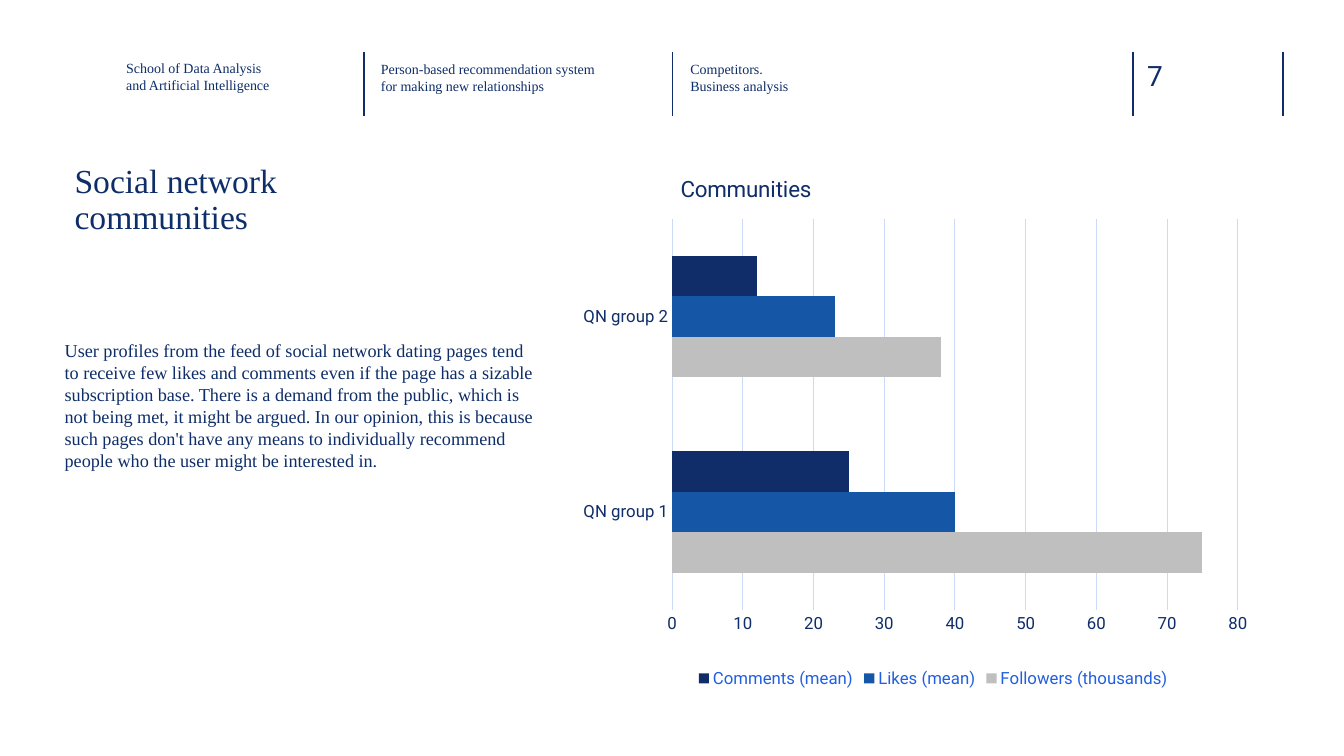
from lxml import etree
from pptx import Presentation
from pptx.chart.data import CategoryChartData
from pptx.dml.color import RGBColor
from pptx.enum.chart import XL_CHART_TYPE, XL_LEGEND_POSITION, XL_TICK_MARK
from pptx.enum.shapes import MSO_CONNECTOR
from pptx.oxml import parse_xml
from pptx.oxml.ns import nsdecls, qn
from pptx.util import Cm, Pt

NAVY, INK, GRID = "102D69", "0E2D69", "CCDAF8"
SERIF, SANS = "Times New Roman", "Roboto"


def style(font, size, color, face=SANS):
    font.size = Pt(size)
    font.name = face
    font.bold = False
    font.color.rgb = RGBColor.from_string(color)


def add_text(left, top, width, height, lines, size, color=INK, face=SERIF,
             insets=(0, 0), spacing=None):
    """Add a wrapping text box; insets are (horizontal, vertical) in cm."""
    frame = slide.shapes.add_textbox(Cm(left), Cm(top), Cm(width), Cm(height)).text_frame
    frame.word_wrap = True
    frame.margin_left = frame.margin_right = Cm(insets[0])
    frame.margin_top = frame.margin_bottom = Cm(insets[1])
    for index, line in enumerate(lines):
        paragraph = frame.paragraphs[0] if index == 0 else frame.add_paragraph()
        paragraph.line_spacing = spacing
        run = paragraph.add_run()
        run.text = line
        style(run.font, size, color, face)


presentation = Presentation()
presentation.slide_width, presentation.slide_height = Cm(33.87), Cm(19.05)
slide = presentation.slides.add_slide(presentation.slide_layouts[6])

# Header
for x in (9.17, 16.94, 28.55, 32.33):
    divider = slide.shapes.add_connector(MSO_CONNECTOR.STRAIGHT, Cm(x), Cm(1.3), Cm(x), Cm(2.92))
    divider.line.color.rgb = RGBColor.from_string(NAVY)
    divider.line.width = Pt(1)
    etree.SubElement(divider._element.spPr, qn("a:effectLst"))

add_text(28.91, 1.47, 1.85, 0.86, ["7"], 20, NAVY, SANS)
for left, top, width, lines in (
    (3.18, 1.5, 5.28, ["School of Data Analysis", "and Artificial Intelligence"]),
    (9.6, 1.52, 5.74, ["Person-based recommendation system for making new relationships"]),
    (17.4, 1.52, 5.74, ["Competitors.", "Business analysis"]),
):
    add_text(left, top, width, 1.14, lines, 10)

# Heading and argument
add_text(1.63, 4.01, 29.77, 2.16, ["Social network", "communities"], 24,
         insets=(0.25, 0.13), spacing=0.9)
add_text(1.63, 8.56, 12.01, 6.48, [
    "User profiles from the feed of social network dating pages tend to receive few likes "
    "and comments even if the page has a sizable subscription base. There is a demand from "
    "the public, which is not being met, it might be argued. In our opinion, this is because "
    "such pages don't have any means to individually recommend people who the user might be "
    "interested in."], 13)

# Community activity chart
activity = (
    ("Followers (thousands)", (75, 38), "BFBFBF"),
    ("Likes (mean)", (40, 23), "1656A6"),
    ("Comments (mean)", (25, 12), NAVY),
)
chart_data = CategoryChartData()
chart_data.categories = ["QN group 1", "QN group 2"]
for name, values, _ in activity:
    chart_data.add_series(name, values)
chart = slide.shapes.add_chart(XL_CHART_TYPE.BAR_CLUSTERED, Cm(14.53), Cm(4.04),
                               Cm(17.98), Cm(13.41), chart_data).chart
style(chart.font, 10, NAVY, "Arial")

bars = chart.plots[0]
bars.gap_width = 182
bars.overlap = 0
bars.vary_by_categories = False
for series, (_, _, color) in zip(bars.series, activity):
    series.format.fill.solid()
    series.format.fill.fore_color.rgb = RGBColor.from_string(color)

groups, scale = chart.category_axis, chart.value_axis
for axis in (groups, scale):
    axis.major_tick_mark = axis.minor_tick_mark = XL_TICK_MARK.NONE
    style(axis.tick_labels.font, 12, NAVY)
scale.minimum_scale, scale.maximum_scale, scale.major_unit = 0, 80, 10
scale.has_major_gridlines = True
scale.format.line.fill.background()
for line in (groups.format.line, scale.major_gridlines.format.line):
    line.color.rgb = RGBColor.from_string(GRID)
    line.width = Pt(0.75)

chart.has_legend = True
chart.legend.position = XL_LEGEND_POSITION.BOTTOM
chart.legend.include_in_layout = False
style(chart.legend.font, 12, "215FDF")

chart.has_title = True
title = chart.chart_title
title_run = title.text_frame.paragraphs[0].add_run()
title_run.text = "Communities"
style(title_run.font, 16, NAVY)
title.include_in_layout = False

# Fixed places for the title and the plot area, as shares of the chart
plot_area = bars._element.getparent()
for parent, place in (
    (title._element, {"xMode": "edge", "yMode": "edge", "x": 0.14, "y": 0.02}),
    (plot_area, {"layoutTarget": "inner", "xMode": "edge", "yMode": "edge",
                 "x": 0.134, "y": 0.11, "w": 0.793, "h": 0.735}),
):
    for automatic in parent.findall(qn("c:layout")):
        parent.remove(automatic)
    settings = "".join(f'<c:{key} val="{value}"/>' for key, value in place.items())
    layout = parse_xml(f'<c:layout {nsdecls("c")}><c:manualLayout>{settings}'
                       '</c:manualLayout></c:layout>')
    parent.insert(0 if parent is plot_area else 1, layout)

presentation.save("out.pptx")
